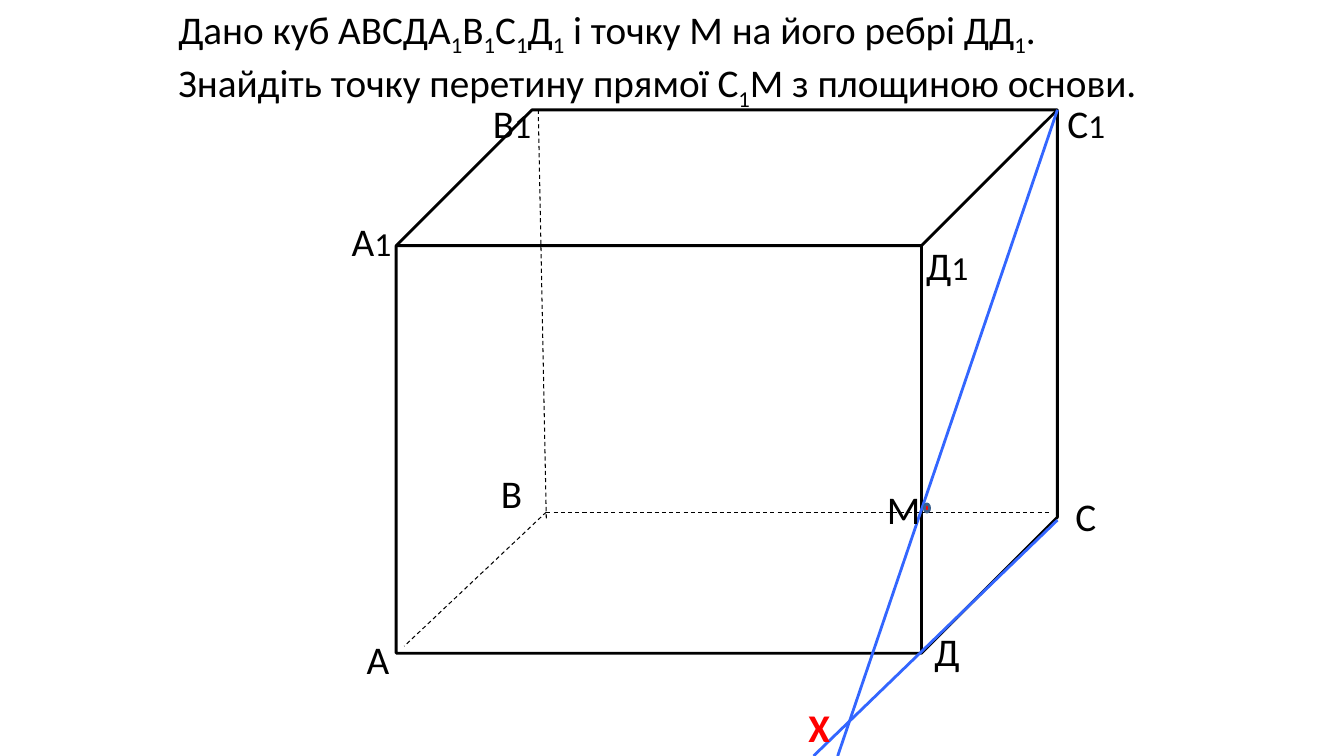
"""Builds a geometry slide: a cube, its lettered vertices and the section point X."""
from pptx import Presentation
from pptx.dml.color import RGBColor as Rgb
from pptx.enum.dml import MSO_LINE as Dash
from pptx.enum.shapes import MSO_CONNECTOR as Link, MSO_SHAPE as Preset
from pptx.oxml.ns import qn
from pptx.util import Inches, Pt
from lxml.etree import SubElement

COLORS = {"ink": "000000", "ray": "3366FF", "mark": "FF0000", "rim": "3A5F8C"}


class Drawing:
    """Holds the style and slide; lengths are percentages of the slide's width and height."""

    font, size, index_size = "Calibri", 28, 24

    def __init__(self, deck):
        """Adds a blank slide to the deck."""
        self.width, self.height = deck.slide_width, deck.slide_height
        self.slide = deck.slides.add_slide(deck.slide_layouts[6])

    def place(self, *shares):
        """Turns alternating horizontal and vertical shares into lengths."""
        sides = (self.width, self.height) * 2
        return [round(side * share / 100) for side, share in zip(sides, shares)]

    def solid(self, preset, box, line, fill=None):
        """Draws a preset shape, hollow when no fill is given."""
        body = self.slide.shapes.add_shape(preset, *self.place(*box))
        body.shadow.inherit = False
        if fill:
            body.fill.solid()
            body.fill.fore_color.rgb = Rgb.from_string(COLORS[fill])
        else:
            body.fill.background()
        body.line.color.rgb = Rgb.from_string(COLORS[line])
        body.line.width = Pt(2)

    def segment(self, start, end, color="ink", weight=0.75, dash=None):
        """Draws a straight line between two points."""
        edge = self.slide.shapes.add_connector(Link.STRAIGHT, *self.place(*start, *end))
        SubElement(edge._element.spPr, qn("a:effectLst"))
        edge.line.color.rgb = Rgb.from_string(COLORS[color])
        edge.line.width = Pt(weight)
        if dash:
            edge.line.dash_style = dash

    def style(self, run, size, color="ink", bold=None):
        """Applies the slide's font to a run."""
        run.font.name, run.font.size, run.font.bold = self.font, Pt(size), bold
        run.font.color.rgb = Rgb.from_string(COLORS[color])

    def problem(self, wording, box):
        """Writes the wrapped task, each 1 in it as a subscript."""
        frame = self.slide.shapes.add_textbox(*self.place(*box)).text_frame
        frame.word_wrap = True
        parts = wording.split("1")
        for number, part in enumerate(parts):
            for text in (part, "1") if number < len(parts) - 1 else (part,):
                run = frame.paragraphs[0].add_run()
                run.text = text
                self.style(run, self.size)
                if text == "1":
                    run._r.get_or_add_rPr().set("baseline", "-25000")

    def label(self, name, left, top, color="ink", bold=None):
        """Names a point with a letter and an optional smaller index."""
        box = left, top, 4.65 if len(name) > 1 else 3.53, 7.6
        frame = self.slide.shapes.add_textbox(*self.place(*box)).text_frame
        frame.word_wrap = False
        for sign in name:
            run = frame.paragraphs[0].add_run()
            run.text = sign
            self.style(run, self.index_size if sign == "1" else self.size, color, bold)


def main():
    """Draws the construction and saves it."""
    deck = Presentation()
    deck.slide_width, deck.slide_height = Inches(13.33), Inches(7.5)
    drawing = Drawing(deck)
    left, top, right, bottom = 29.48, 14.53, 78.68, 86.4
    drawing.solid(Preset.CUBE, (left, top, right - left, bottom - top), "ink")

    vertex_b = 40.65, 67.73
    hidden_edges = [
        ((40.05, top), (40.65, 68.8)),
        (vertex_b, (78.15, 67.73)),
        (vertex_b, (30.08, 85.47)),
    ]
    for start, end in hidden_edges:
        drawing.segment(start, end, dash=Dash.DASH)

    drawing.problem(
        "Дано куб АВСДА1В1С1Д1 і точку М на його ребрі ДД1. "
        "Знайдіть точку перетину прямої С1М з площиною основи.",
        (12.53, 0, 75, 13.87),
    )
    vertices = {
        "А": (26.55, 83.33), "В": (36.53, 61.47),
        "С": (79.28, 64.53), "Д": (68.78, 82.27),
        "А1": (25.43, 28.13), "В1": (35.93, 12.53),
        "С1": (78.68, 12.53), "Д1": (68.18, 31.2),
    }
    for name, corner in vertices.items():
        drawing.label(name, *corner)

    for start, end in [((right, 68.8), (60.53, 100)), ((right, top), (62.33, 100))]:
        drawing.segment(start, end, "ray", 2)
    drawing.solid(Preset.OVAL, (68.78, 66.67, 0.38, 1.07), "rim", "mark")
    drawing.label("М", 65.25, 63.6)
    drawing.label("Х", 59.4, 92.4, "mark", True)
    deck.save("out.pptx")


if __name__ == "__main__":
    main()
